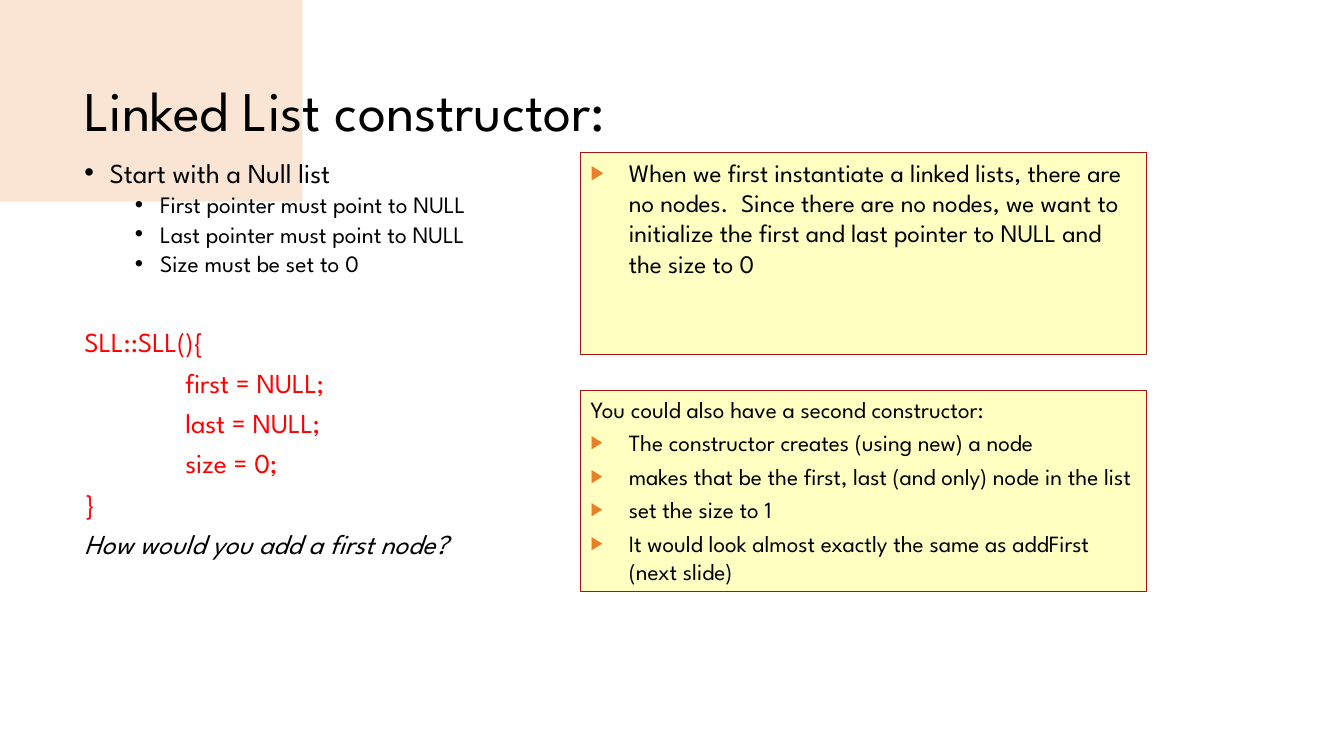
from dataclasses import dataclass

import pptx
import pptx.dml.color
import pptx.enum.shapes
import pptx.enum.text
import pptx.oxml
import pptx.oxml.ns
import pptx.util
from lxml import etree


@dataclass(frozen=True)
class Theme:
    font: str = "League Spartan"
    text: str = "000000"
    code: str = "FF0000"
    accent: str = "E78129"
    note_fill: str = "FFFFC1"
    note_line: str = "A01811"
    title_size: float = 40
    body_size: float = 19.6
    sub_size: float = 16.8
    note_size: float = 18
    list_size: float = 16.6


@dataclass(frozen=True)
class Para:
    text: str
    size: float
    color: str = Theme.text
    italic: bool = False
    level: int = 0
    indent: float = 0
    hang: float = 0
    bullet: str = ""
    before: float = 0
    spacing: float = 1.0


def rgb(value):
    return pptx.dml.color.RGBColor.from_string(value)


def sub(parent, tag, **attrs):
    return etree.SubElement(parent, pptx.oxml.ns.qn(tag), attrs)


class Deck:
    """Holds the theme and current slide; boxes are in percent of the slide's size."""

    def __init__(self, theme, width=13.33, height=7.5):
        self.theme = theme
        self.prs = pptx.Presentation()
        self.prs.slide_width = pptx.util.Inches(width)
        self.prs.slide_height = pptx.util.Inches(height)
        self.slide = self.prs.slides.add_slide(self.prs.slide_layouts[6])

    def box(self, left, top, width, height):
        w, h = self.prs.slide_width, self.prs.slide_height
        return [int(share * side / 100)
                for share, side in zip((left, top, width, height), (w, h, w, h))]

    def brush(self, points, alpha):
        """Draw a translucent closed outline from points in inches."""
        start, *rest = points
        builder = self.slide.shapes.build_freeform(*start, scale=pptx.util.Inches(1))
        builder.add_line_segments(rest, close=True)
        sp = builder.convert_to_shape()
        sp.shadow.inherit = False
        sp.fill.solid()
        sp.fill.fore_color.rgb = rgb(self.theme.accent)
        sp.line.fill.background()
        color = sp.element.spPr.find(".//" + pptx.oxml.ns.qn("a:srgbClr"))
        sub(color, "a:alpha", val=str(alpha * 1000))

    def text(self, box, paras, anchor=pptx.enum.text.MSO_ANCHOR.TOP):
        self.set_paras(self.slide.shapes.add_textbox(*self.box(*box)), paras, anchor)

    def note(self, box, paras):
        rect = pptx.enum.shapes.MSO_SHAPE.RECTANGLE
        sp = self.slide.shapes.add_shape(rect, *self.box(*box))
        sp.shadow.inherit = False
        sp.fill.solid()
        sp.fill.fore_color.rgb = rgb(self.theme.note_fill)
        sp.line.color.rgb = rgb(self.theme.note_line)
        sp.line.width = pptx.util.Pt(0.75)
        self.set_paras(sp, paras, pptx.enum.text.MSO_ANCHOR.TOP)

    def set_paras(self, sp, paras, anchor):
        tf = sp.text_frame
        tf.word_wrap = True
        tf.vertical_anchor = anchor
        for i, para in enumerate(paras):
            p = tf.paragraphs[0] if i == 0 else tf.add_paragraph()
            p.alignment = pptx.enum.text.PP_ALIGN.LEFT
            p.level = para.level
            p.line_spacing = para.spacing
            p.space_before = pptx.util.Pt(para.before)
            self.indent(p, para)
            r = p.add_run()
            r.text = para.text
            r.font.name = self.theme.font
            r.font.size = pptx.util.Pt(para.size)
            r.font.italic = para.italic
            r.font.color.rgb = rgb(para.color)

    def indent(self, p, para):
        pPr = p._p.get_or_add_pPr()
        pPr.set("marL", str(pptx.util.Inches(para.indent)))
        pPr.set("indent", str(pptx.util.Inches(-para.hang)))
        if not para.bullet:
            sub(pPr, "a:buNone")
            return
        if para.bullet == "▶":
            sub(sub(pPr, "a:buClr"), "a:srgbClr", val=self.theme.accent)
            sub(pPr, "a:buSzPct", val="80000")
        sub(pPr, "a:buFont", typeface="Arial")
        sub(pPr, "a:buChar", char=para.bullet)


BRUSH = [
    (0, 0.34), (0.06, 0.35), (0.25, 0.37), (0.66, 0.38), (1.02, 0.37), (1.51, 0.38),
    (1.94, 0.41), (2.48, 0.41), (2.64, 0.41), (2.8, 0.47), (2.71, 0.49), (2.55, 0.54),
    (2.53, 0.57), (2.56, 0.59), (2.62, 0.62), (2.48, 0.62), (2.38, 0.66), (2.46, 0.68),
    (2.56, 0.7), (2.66, 0.71), (2.75, 0.74), (2.63, 0.74), (2.51, 0.75), (2.63, 0.78),
    (2.73, 0.81), (2.8, 0.82), (2.88, 0.83), (2.9, 0.85), (2.87, 0.88), (2.84, 0.88),
    (2.63, 0.88), (2.96, 0.92), (3.3, 0.94), (3.21, 0.97), (3.22, 1.03), (3.18, 1.06),
    (3.12, 1.07), (3.07, 1.11), (3, 1.13), (2.83, 1.16), (2.8, 1.2), (2.78, 1.25),
    (2.74, 1.28), (2.92, 1.27), (3.08, 1.28), (2.89, 1.33), (2.69, 1.38), (2.73, 1.42),
    (2.62, 1.45), (2.52, 1.48), (2.63, 1.48), (2.53, 1.53), (2.33, 1.6), (1.97, 1.72),
    (1.02, 1.88), (0.65, 1.91), (0.23, 1.9), (0.07, 1.89), (0, 1.88),
]
GOALS = ["First pointer must point to NULL", "Last pointer must point to NULL",
         "Size must be set to 0"]
CODE = [("SLL::SLL(){", 0), ("first = NULL;", 1), ("last = NULL;", 1),
        ("size = 0;", 1), ("}", 0)]
INSTANTIATE = ("When we first instantiate a linked lists, there are no nodes.  "
               "Since there are no nodes, we want to initialize the first and last "
               "pointer to NULL and the size to 0")
SECOND = ["The constructor creates (using new) a node",
          "makes that be the first, last (and only) node in the list",
          "set the size to 1",
          "It would look almost exactly the same as addFirst (next slide)"]
NOTE_LEFT, NOTE_TOP, NOTE_WIDTH, NOTE_HEIGHT, NOTE_PITCH = 43.2, 20.15, 42.1, 26.7, 31.45
LEFT = 5.55
CODE_GAP = 39


def main():
    th = Theme()
    deck = Deck(th)
    deck.brush(BRUSH, alpha=20)
    deck.text((LEFT, 8.95, 70.5, 12),
              [Para("Linked List constructor:", th.title_size, spacing=0.9)],
              pptx.enum.text.MSO_ANCHOR.MIDDLE)

    body = dict(before=10, spacing=0.8)
    paras = [Para("Start with a Null list", th.body_size, indent=0.25, hang=0.25,
                  bullet="•", **body)]
    paras += [Para(goal, th.sub_size, level=1, indent=0.75, hang=0.25, bullet="•",
                   before=5, spacing=0.8) for goal in GOALS]
    paras += [Para(line, th.body_size, th.code, indent=depth, spacing=0.8,
                   before=10 if i else CODE_GAP) for i, (line, depth) in enumerate(CODE)]
    paras.append(Para("How would you add a first node?", th.body_size, italic=True, **body))
    deck.text((LEFT, 20.8, 33.7, 67.2), paras)

    arrow = dict(indent=0.38, hang=0.38, bullet="▶", before=4)
    notes = [
        [Para(INSTANTIATE, th.note_size, **arrow)],
        [Para("You could also have a second constructor:", th.list_size, before=4)]
        + [Para(step, th.list_size, **arrow) for step in SECOND],
    ]
    for row, note in enumerate(notes):
        deck.note((NOTE_LEFT, NOTE_TOP + row * NOTE_PITCH, NOTE_WIDTH, NOTE_HEIGHT), note)
    deck.prs.save("out.pptx")


if __name__ == "__main__":
    main()
